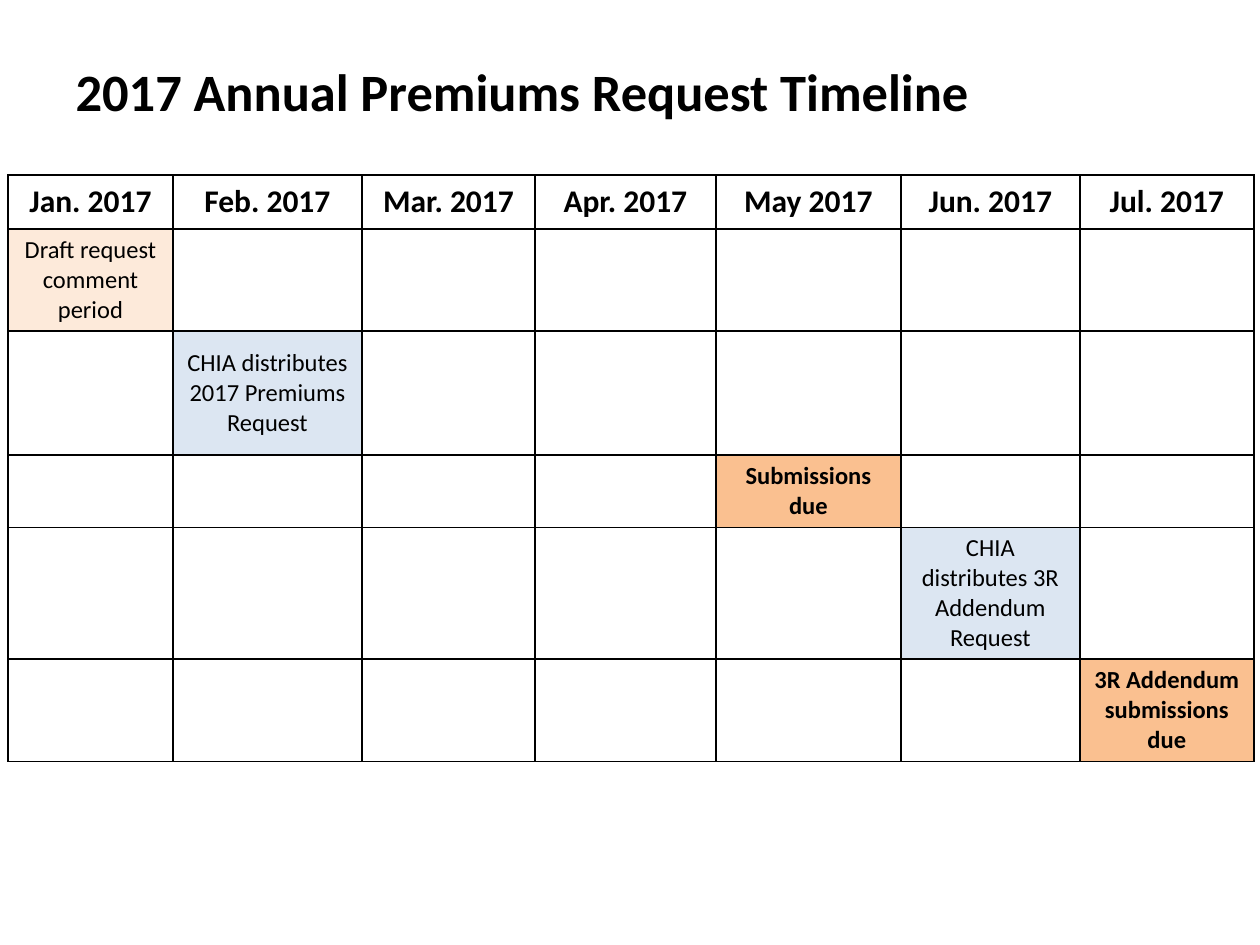
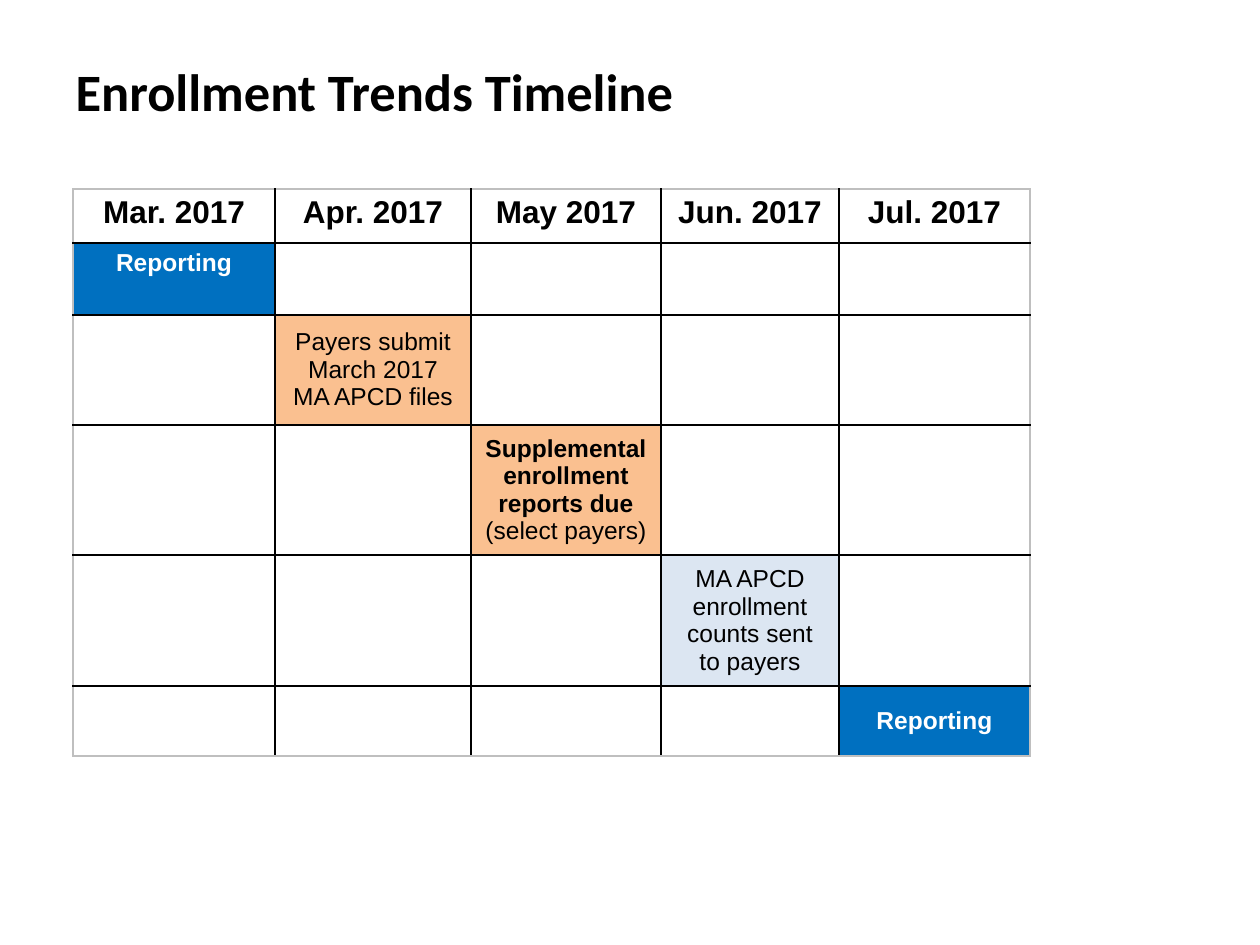
import dataclasses

import lxml.etree
import pptx
import pptx.dml.color
import pptx.enum.text
import pptx.oxml.ns
import pptx.util

EMU_PER_PX = 914400 / 126


@dataclasses.dataclass(frozen=True)
class Theme:
    """Colours, fonts and type sizes shared by the slides."""
    ink: str = "000000"
    paper: str = "FFFFFF"
    frame: str = "BFBFBF"
    draft: str = "FDEADA"
    sent: str = "DCE6F2"
    due: str = "FAC090"
    report: str = "0070C0"
    title_font: str = "Calibri"
    title_size: int = 30
    month_size: int = 18
    event_size: int = 14
    border_width: int = 1


@dataclasses.dataclass(frozen=True)
class Event:
    """One timeline entry: its month column, wording and look."""
    month: int
    text: str
    fill: str
    color: str = Theme.ink
    bold: bool = False
    light_tail: str = ""
    anchor: str = "MIDDLE"


def px(length):
    """Turn whole pixels into EMU."""
    return pptx.util.Emu(round(length * EMU_PER_PX))


def rgb(color):
    """Turn a hex string into a colour."""
    return pptx.dml.color.RGBColor.from_string(color)


class TimelineDeck:
    """Holds the presentation, its theme and the current slide."""

    def __init__(self, theme):
        self.theme = theme
        self.presentation = pptx.Presentation()
        self.presentation.slide_width = px(1260)
        self.presentation.slide_height = px(945)
        self.slide = None

    def add_slide(self, title):
        """Start a slide with a left-aligned title."""
        layout = self.presentation.slide_layouts[5]
        self.slide = self.presentation.slides.add_slide(layout)
        shape = self.slide.shapes.title
        shape.left, shape.top = px(63), px(53)
        shape.width, shape.height = px(1071), px(77)
        frame = shape.text_frame
        frame.text = title
        frame.word_wrap = True
        frame.auto_size = pptx.enum.text.MSO_AUTO_SIZE.NONE
        frame.vertical_anchor = pptx.enum.text.MSO_ANCHOR.TOP
        paragraph = frame.paragraphs[0]
        paragraph.alignment = pptx.enum.text.PP_ALIGN.LEFT
        self.format_run(paragraph.runs[0], self.theme.title_font,
                        self.theme.title_size, self.theme.ink, True)

    def format_run(self, run, font, size, color, bold):
        """Set the type of one run."""
        run.font.name = font
        run.font.size = pptx.util.Pt(size)
        run.font.color.rgb = rgb(color)
        run.font.bold = bold

    def add_timeline(self, left, top, widths, heights, months, events, font,
                     frame_color, month_anchor):
        """Draw a month table with one event in each row."""
        row_count, column_count = len(heights), len(widths)
        table = self.slide.shapes.add_table(
            row_count, column_count, px(left), px(top),
            px(sum(widths)), px(sum(heights))).table
        table.first_row = table.horz_banding = False
        for column, width in zip(table.columns, widths):
            column.width = px(width)
        for row, height in zip(table.rows, heights):
            row.height = px(height)
        for row in range(row_count):
            for column in range(column_count):
                cell = table.cell(row, column)
                outer = {"L": column == 0, "R": column == column_count - 1,
                         "T": row == 0, "B": row == row_count - 1}
                self.add_borders(cell, outer, frame_color)
                cell.fill.background()
        for column, month in enumerate(months):
            self.write_cell(table.cell(0, column), f"{month} 2017", font,
                            self.theme.month_size, self.theme.ink, True, month_anchor)
        for row, event in enumerate(events, start=1):
            cell = table.cell(row, event.month)
            cell.fill.solid()
            cell.fill.fore_color.rgb = rgb(event.fill)
            self.write_cell(cell, event.text, font, self.theme.event_size,
                            event.color, event.bold, event.anchor)
            if event.light_tail:
                run = cell.text_frame.paragraphs[0].add_run()
                run.text = event.light_tail
                self.format_run(run, font, self.theme.event_size, event.color, False)

    def write_cell(self, cell, text, font, size, color, bold, anchor):
        """Put centred text in a cell."""
        cell.vertical_anchor = pptx.enum.text.MSO_ANCHOR[anchor]
        paragraph = cell.text_frame.paragraphs[0]
        paragraph.text = text
        paragraph.alignment = pptx.enum.text.PP_ALIGN.CENTER
        self.format_run(paragraph.runs[0], font, size, color, bold)

    def add_borders(self, cell, outer, frame_color):
        """Line all sides of a cell, with the frame colour on outer sides."""
        qualify = pptx.oxml.ns.qn
        properties = cell._tc.get_or_add_tcPr()
        for side, is_outer in outer.items():
            line = lxml.etree.SubElement(properties, qualify(f"a:ln{side}"))
            line.set("w", str(pptx.util.Pt(self.theme.border_width)))
            fill = lxml.etree.SubElement(line, qualify("a:solidFill"))
            color = lxml.etree.SubElement(fill, qualify("a:srgbClr"))
            color.set("val", frame_color if is_outer else self.theme.ink)


def main():
    """Build both timelines and save them."""
    theme = Theme()
    deck = TimelineDeck(theme)
    months = ["Jan.", "Feb.", "Mar.", "Apr.", "May", "Jun.", "Jul."]

    deck.add_slide("2017 Annual Premiums Request Timeline")
    deck.add_timeline(
        left=8, top=175,
        widths=[165, 189, 173, 181, 185, 179, 174],
        heights=[54, 101, 124, 71, 130, 101],
        months=months,
        events=[
            Event(0, "Draft request comment period", theme.draft),
            Event(1, "CHIA distributes 2017 Premiums Request", theme.sent),
            Event(4, "Submissions due", theme.due, bold=True),
            Event(5, "CHIA distributes 3R Addendum Request", theme.sent),
            Event(6, "3R Addendum submissions due", theme.due, bold=True),
        ],
        font="Calibri", frame_color=theme.ink, month_anchor="MIDDLE")

    deck.add_slide("Enrollment Trends Timeline")
    deck.add_timeline(
        left=73, top=189,
        widths=[202, 196, 190, 178, 191],
        heights=[54, 72, 110, 130, 131, 70],
        months=months[2:],
        events=[
            Event(0, "Reporting", theme.report, theme.paper, True, anchor="TOP"),
            Event(1, "Payers submit March 2017 MA APCD files", theme.due),
            Event(2, "Supplemental enrollment reports due ", theme.due,
                  bold=True, light_tail="(select payers)"),
            Event(3, "MA APCD enrollment counts sent to payers", theme.sent),
            Event(4, "Reporting", theme.report, theme.paper, True),
        ],
        font="Arial", frame_color=theme.frame, month_anchor="TOP")

    deck.presentation.save("out.pptx")


if __name__ == "__main__":
    main()
